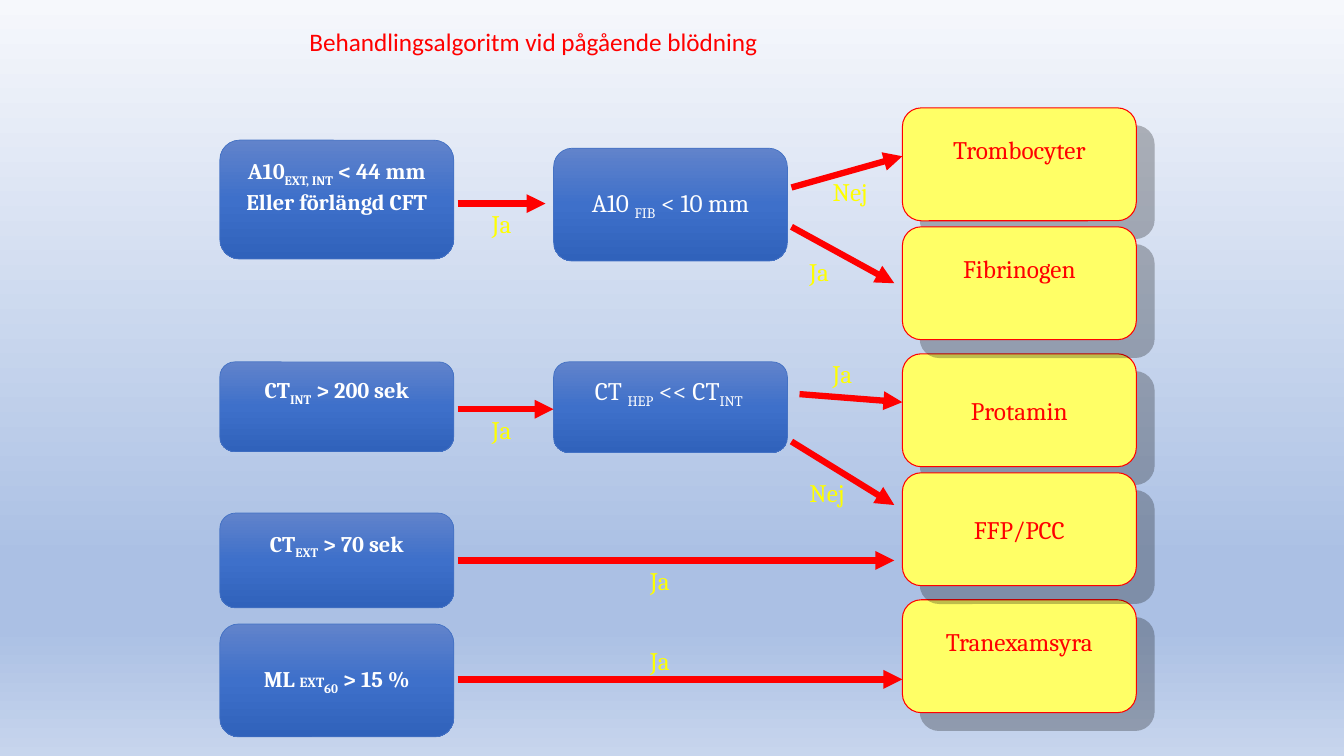
"""Build a slide with the treatment flow for ongoing bleeding."""
from dataclasses import dataclass
from typing import Any, NamedTuple

from lxml import etree
from pptx import Presentation
from pptx import util as u
from pptx.dml.color import RGBColor
from pptx.enum import shapes, text
from pptx.oxml.ns import qn

HUES = {"red": "FF0000", "yellow": "FFFF00", "lemon": "FFFF66",
        "white": "FFFFFF", "blue": "4472C4", "black": "000000"}
SKY = [(0, "F6F8FC"), (74, "ABC0E4"), (83, "ABC0E4"), (100, "C7D5ED")]
DEEP = [(0, "6183CB"), (50, "3E70CA"), (100, "3062BB")]
WIDE = 2.32
TALL = 1.12
TEST, CHECK, DRUG = 2.18, 5.49, 8.95


class Part(NamedTuple):
    words: str
    low: bool = False
    size: int = 0


@dataclass
class Style:
    hue: str
    size: int = 18
    bold: bool = False
    font: str = "Cambria"


@dataclass
class Box:
    left: float
    top: float
    tall: float
    lines: list[list[Part]]
    style: Style
    lift: float = 0


class Label(NamedTuple):
    words: str
    left: float
    top: float
    wide: float


class Arrow(NamedTuple):
    left: float
    top: float
    right: float
    end: float


BOLD = Style("white", 16, True)
PLAIN = Style("white")
CURE = Style("red")
NOTE = Style("yellow")
HEAD = Style("red", font="Calibri")

STEPS = [
    Box(TEST, 1.39, 1.18,
        [[Part("A10"), Part("EXT, INT", True), Part(" < 44 mm")],
         [Part("Eller förlängd CFT")]], BOLD, 0.27),
    Box(CHECK, 1.47, TALL,
        [[Part("A10 "), Part("FIB", True), Part(" < 10 mm")]], PLAIN),
    Box(TEST, 5.09, 0.94,
        [[Part("CT"), Part("EXT", True), Part(" > 70 sek")]], BOLD, 0.3),
    Box(TEST, 3.59, 0.89,
        [[Part("CT"), Part("INT", True), Part(" > 200 sek")]], BOLD, 0.3),
    Box(TEST, 6.19, TALL,
        [[Part("ML "), Part("EXT", size=10), Part("60", True),
          Part(" > 15 %")]], BOLD),
    Box(CHECK, 3.59, 0.9,
        [[Part("CT "), Part("HEP", True), Part(" << CT"),
          Part("INT ", True)]], PLAIN, 0.3),
]
DRUGS = [("Trombocyter", 1.07, 0.3), ("Protamin", 3.51, 0),
         ("Tranexamsyra", 5.95, 0.3), ("Fibrinogen", 2.25, 0.3),
         ("FFP/PCC", 4.69, 0)]
CURES = [Box(DRUG, top, TALL, [[Part(name)]], CURE, lift)
         for name, top, lift in DRUGS]
YES, NO = 0.41, 0.59
LABELS = [
    Label("Ja", 7.93, 2.49, YES), Label("Ja", 6.35, 5.56, YES),
    Label("Ja", 4.78, 4.06, YES), Label("Ja", 8.16, 3.51, YES),
    Label("Nej", 8.16, 1.7, NO), Label("Ja", 4.78, 2.02, YES),
    Label("Ja", 6.35, 6.35, YES), Label("Nej", 7.93, 4.69, NO),
]
ARROWS = [
    Arrow(7.85, 1.86, DRUG, 1.55), Arrow(7.85, 2.25, 8.87, 2.81),
    Arrow(4.54, 2.02, 5.41, 2.02), Arrow(4.54, 4.06, CHECK, 4.06),
    Arrow(7.93, 3.91, DRUG, 3.99), Arrow(7.85, 4.38, 8.87, 5.01),
    Arrow(4.54, 5.56, 8.87, 5.56), Arrow(4.54, 6.74, DRUG, 6.74),
]


def tint(name: str) -> RGBColor:
    return RGBColor.from_string(HUES[name])


def add(root: Any, tag: str, **attrs: str) -> Any:
    return etree.SubElement(root, qn(tag), attrs)


def blend(fill: Any, root: Any, stops: list[tuple[int, str]]) -> None:
    fill.gradient()
    fill.gradient_angle = 270
    stack = next(root.iter(qn("a:gsLst")))
    for old in list(stack):
        stack.remove(old)
    for place, hue in stops:
        stop = add(stack, "a:gs", pos=str(place * 1000))
        add(stop, "a:srgbClr", val=hue)


def write(frame: Any, lines: list[list[Part]], style: Style,
          align: Any) -> None:
    frame.text = "\n".join(line[0].words for line in lines)
    for para, line in zip(frame.paragraphs, lines):
        para.alignment = align
        for part in line[1:]:
            para.add_run().text = part.words
        for run, part in zip(para.runs, line):
            font = run.font
            font.name = style.font
            font.size = u.Pt(part.size or style.size)
            font.bold = style.bold
            font.color.rgb = tint(style.hue)
            if part.low:
                font._element.set("baseline", "-25000")


def draw_box(page: Any, box: Box) -> Any:
    shape = page.shapes.add_shape(
        shapes.MSO_SHAPE.ROUNDED_RECTANGLE, u.Inches(box.left),
        u.Inches(box.top), u.Inches(WIDE), u.Inches(box.tall))
    shape.shadow.inherit = False
    frame = shape.text_frame
    frame.word_wrap = True
    frame.vertical_anchor = text.MSO_ANCHOR.MIDDLE
    frame.margin_bottom = u.Inches(0.05 + box.lift)
    write(frame, box.lines, box.style, text.PP_ALIGN.CENTER)
    return shape


def draw_step(page: Any, box: Box) -> None:
    shape = draw_box(page, box)
    blend(shape.fill, shape.element, DEEP)
    shape.line.color.rgb = tint("blue")
    shape.line.width = u.Pt(0.5)


def draw_cure(page: Any, box: Box) -> None:
    shape = draw_box(page, box)
    shape.fill.solid()
    shape.fill.fore_color.rgb = tint("lemon")
    shape.line.color.rgb = tint("red")
    shape.line.width = u.Pt(0.75)
    glow = next(shape.element.iter(qn("a:effectLst")))
    shade = add(glow, "a:outerShdw", dist=str(u.Pt(18)), dir="2700000",
                algn="ctr", rotWithShape="0")
    add(add(shade, "a:srgbClr", val=HUES["black"]), "a:alpha", val="25000")


def draw_label(page: Any, label: Label, style: Style, wrap: bool) -> None:
    area = page.shapes.add_textbox(u.Inches(label.left), u.Inches(label.top),
                                   u.Inches(label.wide), u.Inches(0.4))
    frame = area.text_frame
    frame.word_wrap = wrap
    frame.auto_size = text.MSO_AUTO_SIZE.SHAPE_TO_FIT_TEXT
    write(frame, [[Part(label.words)]], style, text.PP_ALIGN.LEFT)


def draw_arrow(page: Any, arrow: Arrow) -> None:
    link = page.shapes.add_connector(shapes.MSO_CONNECTOR.STRAIGHT,
                                     *(u.Inches(num) for num in arrow))
    link.line.color.rgb = tint("red")
    link.line.width = u.Pt(4.5)
    add(next(link.element.iter(qn("a:ln"))), "a:tailEnd", type="triangle")
    add(link.element.find(qn("p:spPr")), "a:effectLst")


def main() -> None:
    deck = Presentation()
    deck.slide_width, deck.slide_height = u.Inches(13.33), u.Inches(7.5)
    page = deck.slides.add_slide(deck.slide_layouts[6])
    blend(page.background.fill, page.element, SKY)
    for box in STEPS:
        draw_step(page, box)
    for box in CURES:
        draw_cure(page, box)
    for label in LABELS:
        draw_label(page, label, NOTE, False)
    for arrow in ARROWS:
        draw_arrow(page, arrow)
    title = Label("Behandlingsalgoritm vid pågående blödning", 2.97, 0.21, 7.17)
    draw_label(page, title, HEAD, True)
    deck.save("out.pptx")


if __name__ == "__main__":
    main()
